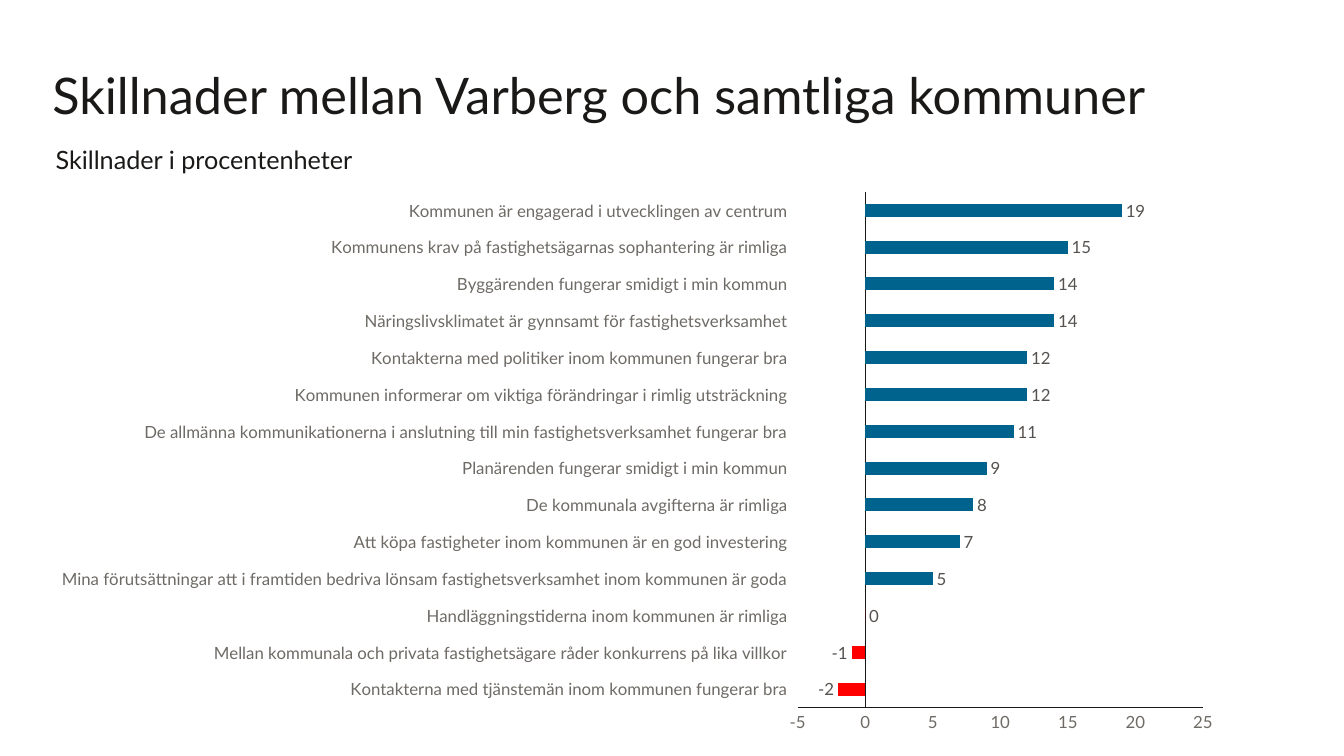
from lxml import etree
from pptx import Presentation
from pptx import util as u
from pptx.chart.data import CategoryChartData
from pptx.dml.color import RGBColor
from pptx.enum import chart as ch, text
from pptx.oxml import ns

INK = RGBColor(0x1A, 0x19, 0x18)
AXIS_GREY = RGBColor(0x6E, 0x6A, 0x65)
LABEL_GREY = RGBColor(0x56, 0x52, 0x4F)
BLUE = RGBColor(0x00, 0x63, 0x8E)
RED = RGBColor(0xFF, 0x00, 0x00)

prs = Presentation()
prs.slide_width, prs.slide_height = u.Inches(13.33), u.Inches(7.5)
COL, ROW = prs.slide_width / 100, prs.slide_height / 100
s = prs.slides.add_slide(prs.slide_layouts[6])


def grid(x, y, w, h):
    """Percent of the slide's width and height as lengths."""
    return int(x * COL), int(y * ROW), int(w * COL), int(h * ROW)


def style(font, size, color):
    font.name, font.size = "Lato", u.Pt(size)
    font.color.rgb = color


# Title and subtitle
title_format = dict(vertical_anchor=text.MSO_ANCHOR.BOTTOM, margin_left=0,
                    margin_right=0, margin_top=0, margin_bottom=0)
subtitle_format = dict(auto_size=text.MSO_AUTO_SIZE.SHAPE_TO_FIT_TEXT)
for words, box, size, spacing, frame_format in [
    ("Skillnader mellan Varberg och samtliga kommuner",
     (3.9, 2.8, 88.6, 13.6), 36, 0.8, title_format),
    ("Skillnader i procentenheter",
     (3.4, 18.5, 54.9, 5.3), 18, 1, subtitle_format),
]:
    tf = s.shapes.add_textbox(*grid(*box)).text_frame
    tf.word_wrap = True
    for name, value in frame_format.items():
        setattr(tf, name, value)
    p = tf.paragraphs[0]
    p.line_spacing = spacing
    r = p.add_run()
    r.text = words
    style(r.font, size, INK)

# Differences, from the bottom bar to the top bar
differences = [
    ("Kontakterna med tjänstemän inom kommunen fungerar bra", -2),
    ("Mellan kommunala och privata fastighetsägare råder konkurrens på lika villkor", -1),
    ("Handläggningstiderna inom kommunen är rimliga", 0),
    ("Mina förutsättningar att i framtiden bedriva lönsam fastighetsverksamhet "
     "inom kommunen är goda", 5),
    ("Att köpa fastigheter inom kommunen är en god investering", 7),
    ("De kommunala avgifterna är rimliga", 8),
    ("Planärenden fungerar smidigt i min kommun", 9),
    ("De allmänna kommunikationerna i anslutning till min fastighetsverksamhet "
     "fungerar bra", 11),
    ("Kommunen informerar om viktiga förändringar i rimlig utsträckning", 12),
    ("Kontakterna med politiker inom kommunen fungerar bra", 12),
    ("Näringslivsklimatet är gynnsamt för fastighetsverksamhet", 14),
    ("Byggärenden fungerar smidigt i min kommun", 14),
    ("Kommunens krav på fastighetsägarnas sophantering är rimliga", 15),
    ("Kommunen är engagerad i utvecklingen av centrum", 19),
]
data = CategoryChartData(number_format="0")
data.categories = [statement for statement, _ in differences]
data.add_series("Series 1", [value for _, value in differences])
chart = s.shapes.add_chart(ch.XL_CHART_TYPE.BAR_CLUSTERED,
                           *grid(2.8, 23.9, 89.2, 74.4), data).chart
chart.has_legend = chart.has_title = False
style(chart.font, 12, INK)

# Bars and their labels
plot = chart.plots[0]
plot.gap_width, plot.vary_by_categories = 182, False
bars = plot.series[0]
bars.invert_if_negative = False
bars.format.fill.solid()
bars.format.fill.fore_color.rgb = BLUE
for i, (_, value) in enumerate(differences):
    if value <= 0:
        fill = bars.points[i].format.fill
        fill.solid()
        fill.fore_color.rgb = RED
labels = bars.data_labels
for name, value in dict(show_value=True, number_format="0",
                        number_format_is_linked=False,
                        position=ch.XL_LABEL_POSITION.OUTSIDE_END).items():
    setattr(labels, name, value)
style(labels.font, 12, LABEL_GREY)

# Axes
for axis in (chart.category_axis, chart.value_axis):
    for name, value in dict(has_major_gridlines=False,
                            major_tick_mark=ch.XL_TICK_MARK.NONE,
                            minor_tick_mark=ch.XL_TICK_MARK.NONE).items():
        setattr(axis, name, value)
    style(axis.tick_labels.font, 12, AXIS_GREY)
    axis.format.line.color.rgb = INK
    axis.format.line.width = u.Pt(0.75)
chart.category_axis.tick_label_position = ch.XL_TICK_LABEL_POSITION.LOW
for name, value in dict(minimum_scale=-5, maximum_scale=25, major_unit=5).items():
    setattr(chart.value_axis, name, value)
chart.value_axis.tick_labels.number_format = "0"
chart.value_axis.tick_labels.number_format_is_linked = False

# Plot area, as shares of the chart
area = chart.plots[0]._element.getparent()
for old in area.findall(ns.qn("c:layout")):
    area.remove(old)
layout = etree.Element(ns.qn("c:layout"))
area.insert(0, layout)
manual = etree.SubElement(layout, ns.qn("c:manualLayout"))
for tag, value in dict(layoutTarget="inner", xMode="edge", yMode="edge",
                       x=0.634, y=0.02, w=0.338, h=0.917).items():
    etree.SubElement(manual, ns.qn("c:" + tag)).set("val", str(value))

prs.save("out.pptx")
